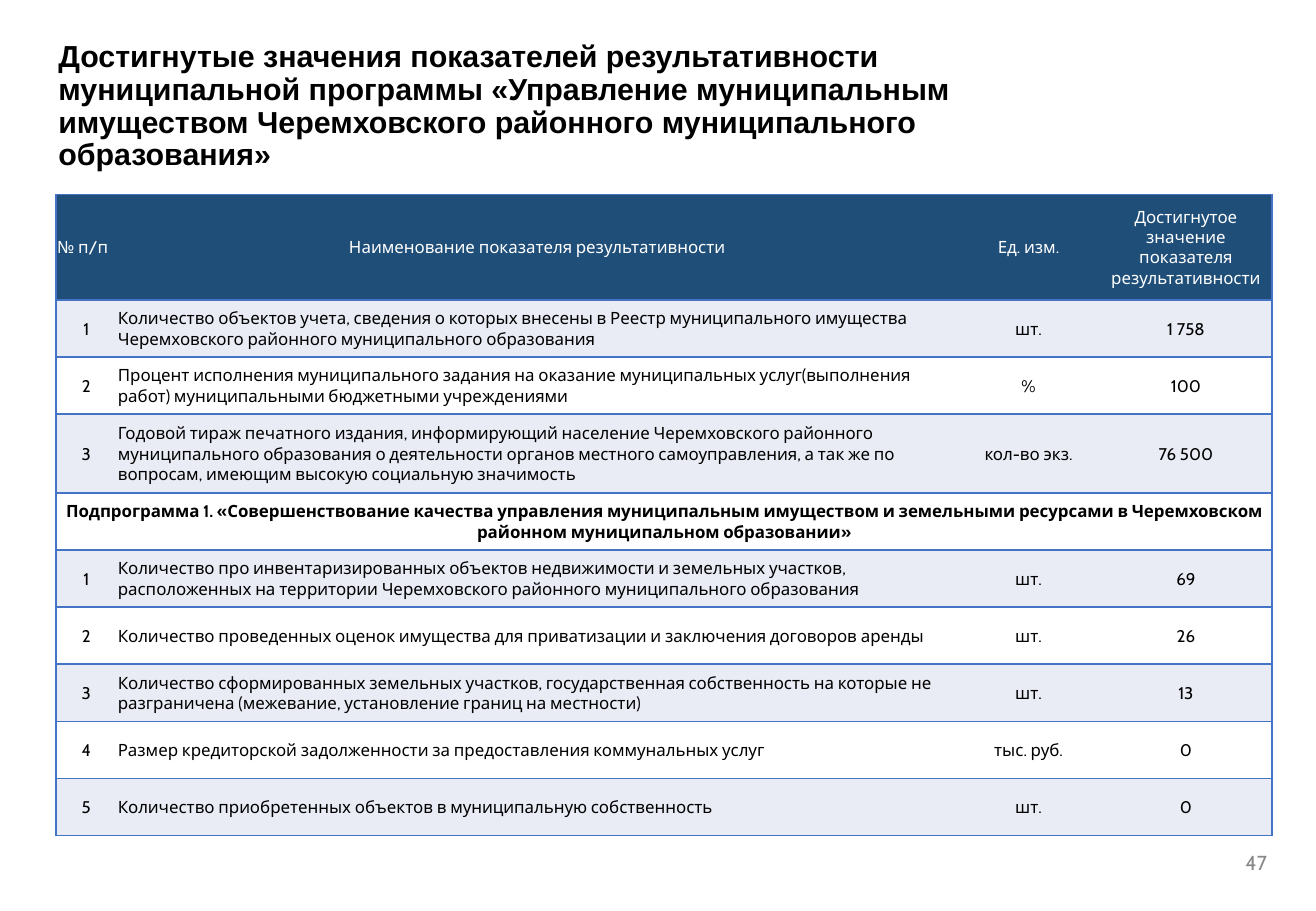
from dataclasses import dataclass

from lxml.etree import SubElement
from pptx import Presentation
from pptx.dml.color import RGBColor
from pptx.enum.text import MSO_ANCHOR, MSO_AUTO_SIZE, PP_ALIGN
from pptx.oxml.ns import qn
from pptx.util import Inches, Pt


@dataclass(frozen=True)
class Theme:
    title_font: str = "Arial"
    body_font: str = "Cabin"
    title_size: float = 18
    table_size: float = 10
    number_size: float = 12
    white: str = "FFFFFF"
    black: str = "000000"
    header: str = "1F4E79"
    band: str = "E9EBF5"
    line: str = "4472C4"
    muted: str = "888888"


THEME = Theme()

TITLE = ("Достигнутые значения показателей результативности муниципальной программы "
         "«Управление муниципальным имуществом Черемховского районного "
         "муниципального образования»")
HEADER = ("№ п/п", "Наименование показателя результативности", "Ед. изм.",
          "Достигнутое значение показателя результативности")
PROGRAM = [
    ("1", "Количество объектов учета, сведения о которых внесены в Реестр муниципального "
          "имущества Черемховского районного муниципального образования", "шт.", "1 758"),
    ("2", "Процент исполнения муниципального задания на оказание муниципальных "
          "услуг(выполнения работ) муниципальными бюджетными учреждениями", "%", "100"),
    ("3", "Годовой тираж печатного издания, информирующий население Черемховского районного "
          "муниципального образования о деятельности органов местного самоуправления, а так же "
          "по вопросам, имеющим высокую социальную значимость", "кол-во экз.", "76 500"),
]
SUBPROGRAM_TITLE = ("Подпрограмма 1. «Совершенствование качества управления муниципальным "
                    "имуществом и земельными ресурсами в Черемховском районном "
                    "муниципальном образовании»",)
SUBPROGRAM = [
    ("1", "Количество про инвентаризированных объектов недвижимости и земельных участков, "
          "расположенных на территории Черемховского районного муниципального образования",
     "шт.", "69"),
    ("2", "Количество проведенных оценок имущества для приватизации и заключения договоров "
          "аренды", "шт.", "26"),
    ("3", "Количество сформированных земельных участков, государственная собственность на "
          "которые не разграничена (межевание, установление границ на местности)", "шт.", "13"),
    ("4", "Размер кредиторской задолженности за предоставления коммунальных услуг",
     "тыс. руб.", "0"),
    ("5", "Количество приобретенных объектов в муниципальную собственность", "шт.", "0"),
]
ROWS = [HEADER, *PROGRAM, SUBPROGRAM_TITLE, *SUBPROGRAM]
COLUMN_WIDTHS = (0.5, 6.92, 1.17, 1.42)
ROW_HEIGHT = 0.47
TALL_ROWS = {0: 0.87, 3: 0.65}


def add_span(para, text, font, size, color, bold=False):
    span = para.add_run()
    span.text = text
    span.font.name = font
    span.font.size = Pt(size)
    span.font.bold = bold
    span.font.color.rgb = RGBColor.from_string(color)


def place(box, left, top, width, height):
    box.left, box.top = Inches(left), Inches(top)
    box.width, box.height = Inches(width), Inches(height)


def add_title(page):
    box = page.shapes.title
    place(box, 0.38, 0.29, 8.92, 1.03)
    frame = box.text_frame
    frame.word_wrap = True
    frame.auto_size = MSO_AUTO_SIZE.NONE
    frame.vertical_anchor = MSO_ANCHOR.TOP
    para = frame.paragraphs[0]
    para.alignment = PP_ALIGN.LEFT
    para.line_spacing = 0.9
    add_span(para, TITLE, THEME.title_font, THEME.title_size, THEME.black, bold=True)


def set_borders(cell, visible):
    """Draw the sides named in visible (L, R, T, B) and clear the others."""
    properties = cell._tc.get_or_add_tcPr()
    for index, side in enumerate("LRTB"):
        edge = properties.makeelement(qn(f"a:ln{side}"), {"w": str(Pt(1))})
        properties.insert(index, edge)
        if side in visible:
            fill = SubElement(edge, qn("a:solidFill"))
            SubElement(fill, qn("a:srgbClr"), val=THEME.line)
        else:
            SubElement(edge, qn("a:noFill"))


def fill_cell(cell, text, fill, color, align, borders, bold=False):
    cell.fill.solid()
    cell.fill.fore_color.rgb = RGBColor.from_string(fill)
    cell.vertical_anchor = MSO_ANCHOR.MIDDLE
    cell.margin_left = cell.margin_right = cell.margin_top = Inches(0.01)
    cell.margin_bottom = 0
    set_borders(cell, borders)
    if text:
        para = cell.text_frame.paragraphs[0]
        para.alignment = align
        add_span(para, text, THEME.body_font, THEME.table_size, color, bold)


def add_indicator_table(page):
    last = len(COLUMN_WIDTHS) - 1
    heights = [TALL_ROWS.get(row, ROW_HEIGHT) for row in range(len(ROWS))]
    table = page.shapes.add_table(
        len(ROWS), len(COLUMN_WIDTHS), Inches(0.46), Inches(1.6),
        Inches(sum(COLUMN_WIDTHS)), Inches(sum(heights))).table
    for column, width in zip(table.columns, COLUMN_WIDTHS):
        column.width = Inches(width)
    for row, height in zip(table.rows, heights):
        row.height = Inches(height)

    for row, texts in enumerate(ROWS):
        is_header, is_section = row == 0, len(texts) == 1
        # Bands alternate below the header
        fill = THEME.header if is_header else THEME.band if row % 2 else THEME.white
        color = THEME.white if is_header else THEME.black
        if is_section:
            table.cell(row, 0).merge(table.cell(row, last))
        for column in range(last + 1):
            left_column = 0 if is_header else 1
            is_left = column == left_column and not is_section
            align = PP_ALIGN.LEFT if is_left else PP_ALIGN.CENTER
            borders = "TB"
            if column == 0:
                borders += "L"
            if column == last or is_section and column == 0:
                borders += "R"
            text = texts[column] if column < len(texts) else ""
            fill_cell(table.cell(row, column), text, fill, color, align, borders, is_section)


def add_page_number(page):
    box = page.shapes.add_textbox(Inches(10.21), Inches(7), Inches(0.27), Inches(0.21))
    frame = box.text_frame
    frame.word_wrap = True
    frame.margin_left = frame.margin_right = Inches(0.04)
    frame.margin_top = frame.margin_bottom = 0
    para = frame.paragraphs[0]
    para.line_spacing = Pt(14.2)
    add_span(para, "47", THEME.body_font, THEME.number_size, THEME.muted)


def main():
    deck = Presentation()
    deck.slide_width, deck.slide_height = Inches(10.83), Inches(7.5)
    page = deck.slides.add_slide(deck.slide_layouts.get_by_name("Title Only"))
    page.background.fill.solid()
    page.background.fill.fore_color.rgb = RGBColor.from_string(THEME.white)

    add_title(page)
    add_indicator_table(page)
    add_page_number(page)
    deck.save("out.pptx")


if __name__ == "__main__":
    main()
